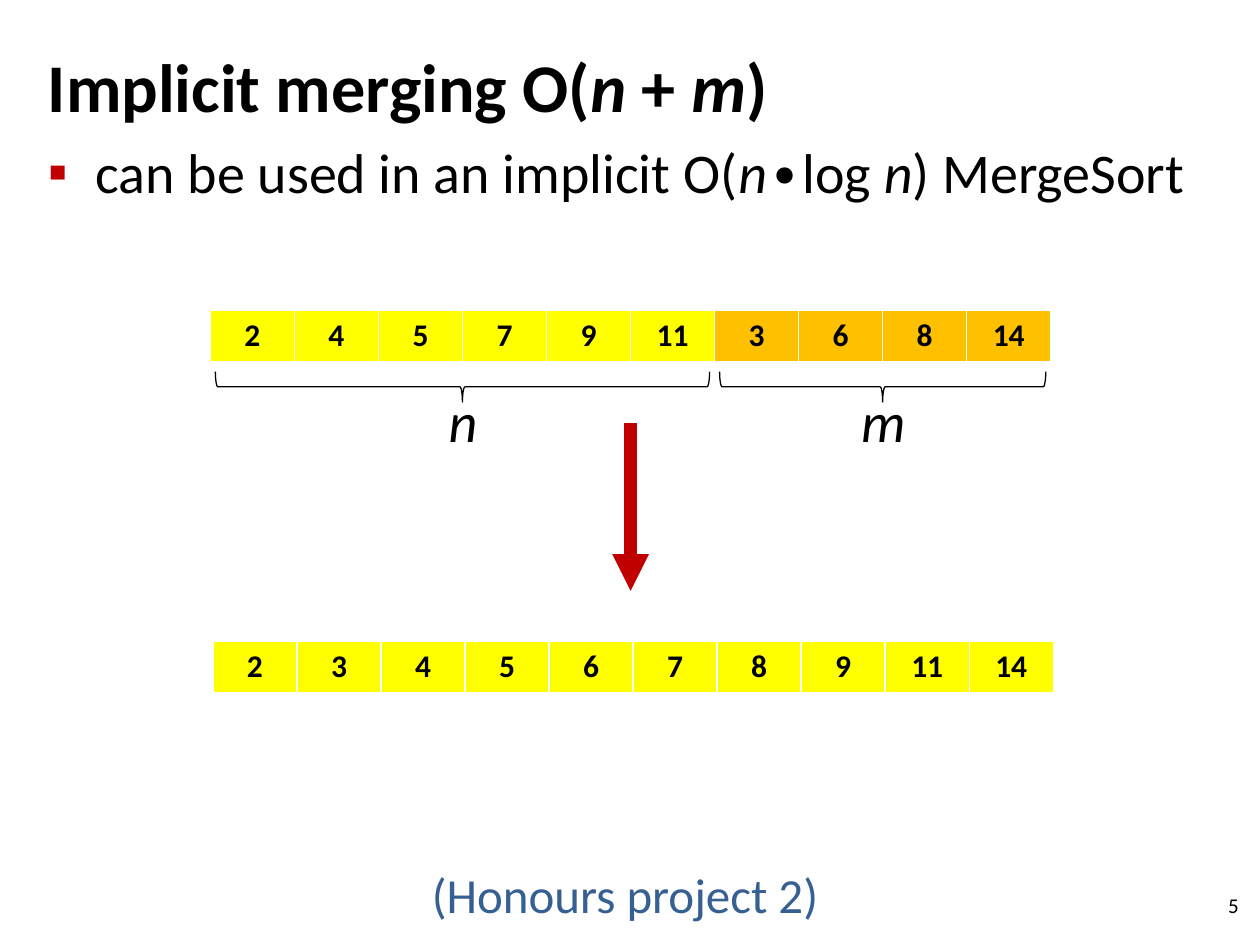
from dataclasses import dataclass

from lxml import etree
from pptx import Presentation
from pptx import util as u
from pptx.dml.color import RGBColor
from pptx.enum import shapes, text
from pptx.oxml.ns import qn


@dataclass(frozen=True)
class Theme:
    font: str = "Calibri"
    ink: str = "000000"
    accent: str = "C00000"
    note: str = "376092"
    first: str = "FFFF00"
    second: str = "FFC000"
    title: int = 39
    body: int = 32
    remark: int = 28
    cell: int = 18
    number: int = 12


T = Theme()
CELL = 0.667
ROW = 0.41
BRACE_GAP = 0.04


def apply(obj, **values):
    for name, value in values.items():
        setattr(obj, name, value)


def place(sp, x, y, w, h):
    apply(sp, left=u.Inches(x), top=u.Inches(y), width=u.Inches(w), height=u.Inches(h))


def write(tf, marked, size, color=T.ink, bold=False, align=text.PP_ALIGN.LEFT,
          anchor=text.MSO_ANCHOR.TOP):
    apply(tf, word_wrap=True, auto_size=text.MSO_AUTO_SIZE.NONE, vertical_anchor=anchor)
    p = tf.paragraphs[0]
    p.alignment = align
    for i, part in enumerate(marked.split("*")):
        if part:
            r = p.add_run()
            r.text = part
            apply(r.font, name=T.font, size=u.Pt(size), bold=bold, italic=i % 2 == 1)
            r.font.color.rgb = RGBColor.from_string(color)
    return p


def label(s, box, marked, size, **style):
    sp = s.shapes.add_textbox(*map(u.Inches, box))
    write(sp.text_frame, marked, size, **style)


def heading(s, box, marked):
    sp = s.shapes.title
    place(sp, *box)
    p = write(sp.text_frame, marked, T.title, bold=True, anchor=text.MSO_ANCHOR.MIDDLE)
    p.line_spacing = 0.9


def bullet(s, box, marked):
    sp = s.placeholders[1]
    place(sp, *box)
    p = write(sp.text_frame, marked, T.body)
    pPr = p._p.get_or_add_pPr()
    indent = u.Inches(0.38)
    pPr.set("marL", str(indent))
    pPr.set("indent", str(-indent))
    clr = etree.SubElement(pPr, qn("a:buClr"))
    etree.SubElement(clr, qn("a:srgbClr"), val=T.accent)
    etree.SubElement(pPr, qn("a:buFont"), typeface="Arial")
    etree.SubElement(pPr, qn("a:buChar"), char="▪")


def array(s, x, y, runs):
    cells = [(v, color) for values, color in runs for v in values]
    n = len(cells)
    tbl = s.shapes.add_table(1, n, *map(u.Inches, (x, y, n * CELL, ROW))).table
    apply(tbl, first_row=True, horz_banding=False)
    for cell, (value, color) in zip(tbl.rows[0].cells, cells):
        cell.fill.solid()
        cell.fill.fore_color.rgb = RGBColor.from_string(color)
        p = cell.text_frame.paragraphs[0]
        p.alignment = text.PP_ALIGN.CENTER
        r = p.add_run()
        r.text = str(value)
        apply(r.font, name=T.font, size=u.Pt(T.cell), bold=True)
        r.font.color.rgb = RGBColor.from_string(T.ink)


def brace(s, x, y, count, name):
    depth, span = 0.24, count * CELL - 2 * BRACE_GAP
    mid = x + count * CELL / 2
    sp = s.shapes.add_shape(shapes.MSO_SHAPE.LEFT_BRACE, 0, 0, 0, 0)
    place(sp, mid - depth / 2, y + (depth - span) / 2, depth, span)
    sp.rotation = 270
    sp.shadow.inherit = False
    sp.fill.background()
    sp.line.color.rgb = RGBColor.from_string(T.ink)
    sp.line.width = u.Pt(0.75)
    label(s, (mid - 0.31, y + 0.07, 0.63, 0.64), f"*{name}*", T.body,
          align=text.PP_ALIGN.CENTER)


def arrow(s, x, top, bottom):
    line = s.shapes.add_connector(shapes.MSO_CONNECTOR.STRAIGHT,
                                  *map(u.Inches, (x, top, x, bottom)))
    line.line.color.rgb = RGBColor.from_string(T.accent)
    line.line.width = u.Pt(7)
    etree.SubElement(line.line._get_or_add_ln(), qn("a:tailEnd"), type="triangle")
    etree.SubElement(line._element.spPr, qn("a:effectLst"))


def merging(s, x, y, halves):
    array(s, x, y, [(values, color) for _, values, color in halves])
    start = x
    for name, values, _ in halves:
        brace(s, start, y + 0.49, len(values), name)
        start += len(values) * CELL
    arrow(s, x + 5 * CELL, y + 0.9, y + 2.23)
    merged = sorted(v for _, values, _ in halves for v in values)
    array(s, x + 0.02, y + 2.63, [(merged, T.first)])


def main():
    prs = Presentation()
    apply(prs, slide_width=u.Inches(10), slide_height=u.Inches(7.5))
    s = prs.slides.add_slide(prs.slide_layouts[1])
    heading(s, (0.28, 0.36, 8.74, 0.71), "Implicit merging O(*n *+ *m*)")
    bullet(s, (0.28, 1.04, 9.5, 0.74),
           "can be used in an implicit O(*n∙*log *n*) MergeSort")
    merging(s, 1.67, 2.46, [("n", [2, 4, 5, 7, 9, 11], T.first),
                            ("m", [3, 6, 8, 14], T.second)])
    label(s, (1.69, 6.81, 6.54, 0.57), "(Honours project 2)", T.remark,
          color=T.note, align=text.PP_ALIGN.CENTER)
    label(s, (7.6, 6.98, 2.33, 0.4), "5", T.number,
          align=text.PP_ALIGN.RIGHT, anchor=text.MSO_ANCHOR.MIDDLE)
    prs.save("out.pptx")


if __name__ == "__main__":
    main()
